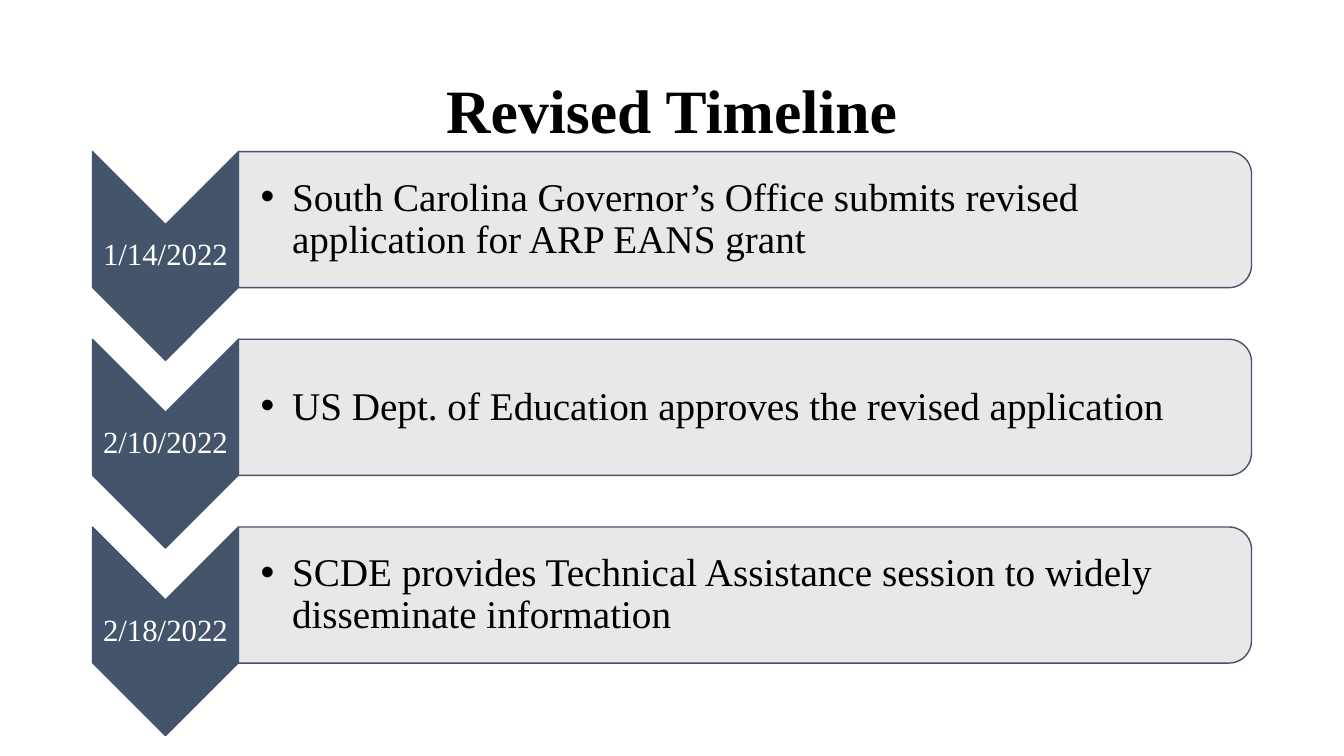
from dataclasses import dataclass

from lxml import etree
from pptx import Presentation
from pptx import util as u
from pptx.dml.color import RGBColor
from pptx.enum import shapes, text
from pptx.oxml.ns import qn


@dataclass(frozen=True)
class Theme:
    font: str = "Times New Roman"
    ink: RGBColor = RGBColor(0x00, 0x00, 0x00)
    slate: RGBColor = RGBColor(0x44, 0x54, 0x6A)
    panel: RGBColor = RGBColor(0xE7, 0xE6, 0xE6)
    white: RGBColor = RGBColor(0xFF, 0xFF, 0xFF)
    title_size: int = 44
    date_size: int = 22
    event_size: int = 28


THEME = Theme()
MILESTONES = [
    ("1/14/2022", "South Carolina Governor’s Office submits revised application for ARP EANS grant"),
    ("2/10/2022", "US Dept. of Education approves the revised application"),
    ("2/18/2022", "SCDE provides Technical Assistance session to widely disseminate information"),
]


def style_text(frame, wording, size, color, align, bold=False):
    frame.word_wrap = True
    frame.auto_size = text.MSO_AUTO_SIZE.NONE
    frame.vertical_anchor = text.MSO_ANCHOR.MIDDLE
    paragraph = frame.paragraphs[0]
    paragraph.text = wording
    paragraph.alignment = align
    paragraph.line_spacing = 0.9
    font = paragraph.font
    font.name, font.size, font.bold = THEME.font, u.Pt(size), bold
    font.color.rgb = color
    return paragraph


def add_label(slide, left, top, width, height, left_inset=0.05):
    frame = slide.shapes.add_textbox(u.Cm(left), u.Cm(top), u.Cm(width), u.Cm(height)).text_frame
    frame.margin_left = u.Cm(left_inset)
    frame.margin_top = frame.margin_right = frame.margin_bottom = u.Cm(0.05)
    return frame


def add_turned_shape(slide, kind, left, top, width, height, fill):
    """Place a shape turned by 90 degrees so that it covers the given box."""
    shape = slide.shapes.add_shape(
        kind,
        u.Cm(left + (width - height) / 2), u.Cm(top + (height - width) / 2),
        u.Cm(height), u.Cm(width),
    )
    shape.rotation = 90
    shape.shadow.inherit = False
    shape.fill.solid()
    shape.fill.fore_color.rgb = fill
    shape.line.color.rgb = THEME.slate
    shape.line.width = u.Pt(1)
    return shape


def add_bullet(paragraph, indent):
    properties = paragraph._p.get_or_add_pPr()
    properties.set("marL", str(u.Cm(indent)))
    properties.set("indent", str(-u.Cm(indent)))
    etree.SubElement(properties, qn("a:buFont")).set("typeface", "Arial")
    etree.SubElement(properties, qn("a:buChar")).set("char", "•")
    # Default run properties must follow the bullet in the schema order.
    for defaults in properties.findall(qn("a:defRPr")):
        properties.append(defaults)


def add_title(slide, left, top, width, height):
    title = slide.shapes.title
    title.left, title.top, title.width, title.height = map(u.Cm, (left, top, width, height))
    style_text(title.text_frame, "Revised Timeline", THEME.title_size, THEME.ink,
               text.PP_ALIGN.CENTER, bold=True)


def add_date(slide, date, left, top, width, height):
    add_turned_shape(slide, shapes.MSO_SHAPE.CHEVRON, left, top, width, height, THEME.slate)
    notch = width / 2
    label = add_label(slide, left, top + notch, width, height - 2 * notch)
    style_text(label, date, THEME.date_size, THEME.white, text.PP_ALIGN.CENTER)


def add_event(slide, event, left, top, width, height):
    panel = add_turned_shape(slide, shapes.MSO_SHAPE.ROUND_2_SAME_RECTANGLE,
                             left, top, width, height, THEME.panel)
    color = panel.fill._xPr.find(".//" + qn("a:srgbClr"))
    etree.SubElement(color, qn("a:alpha")).set("val", "90000")
    pad = 0.17
    label = add_label(slide, left, top + pad, width - pad, height - 2 * pad, left_inset=0.56)
    paragraph = style_text(label, event, THEME.event_size, THEME.ink, text.PP_ALIGN.LEFT)
    add_bullet(paragraph, 0.79)


def add_timeline(slide, left, top, width, pitch):
    date_width = 3.68
    for row, (date, event) in enumerate(MILESTONES):
        row_top = top + row * pitch
        add_date(slide, date, left, row_top, date_width, 5.26)
        add_event(slide, event, left + date_width, row_top, width - date_width, 3.43)


def main():
    deck = Presentation()
    deck.slide_width, deck.slide_height = u.Cm(33.87), u.Cm(19.05)
    slide = deck.slides.add_slide(deck.slide_layouts[5])
    add_title(slide, 2.33, 1.01, 29.21, 3.68)
    add_timeline(slide, left=2.33, top=3.82, width=29.21, pitch=4.73)
    deck.save("out.pptx")


if __name__ == "__main__":
    main()
